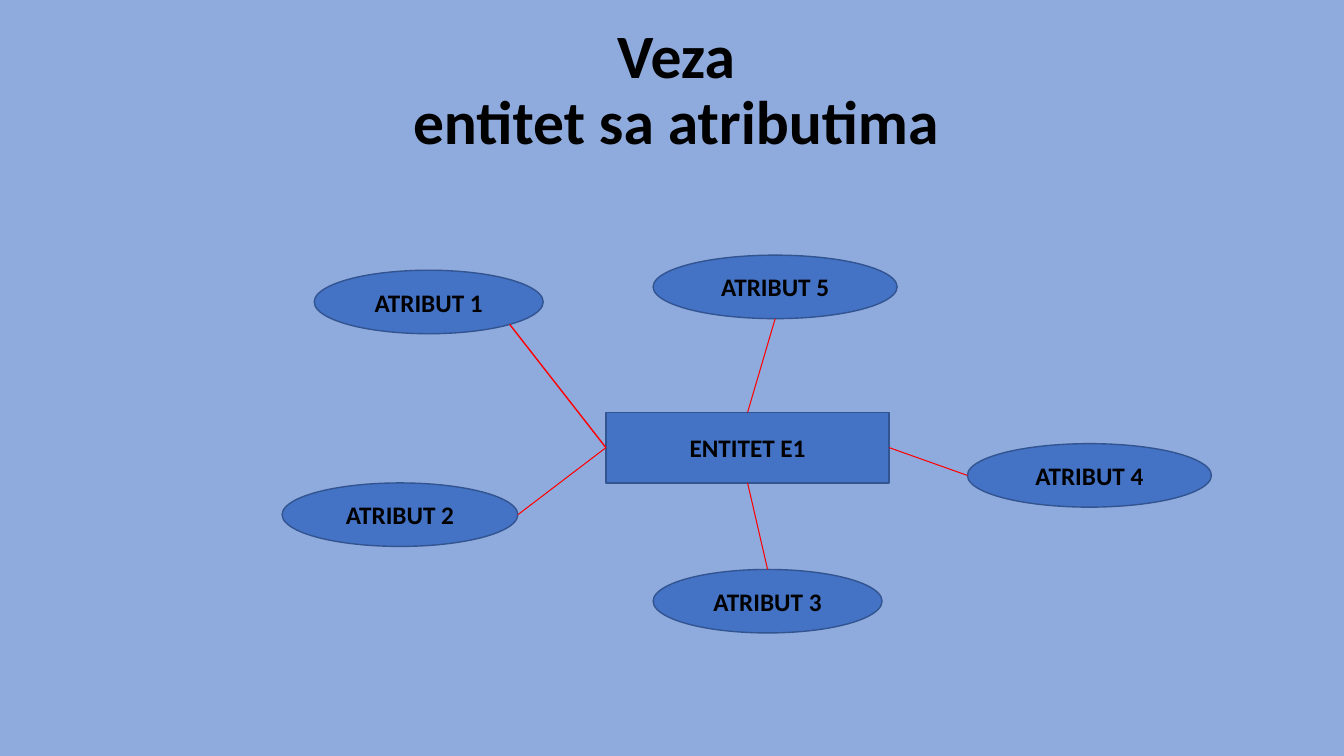
from math import cos, radians, sin

from lxml.etree import SubElement
from pptx import Presentation
from pptx.dml.color import RGBColor
from pptx.enum.shapes import MSO_CONNECTOR as Connector, MSO_SHAPE as Shape
from pptx.enum.text import MSO_ANCHOR as Anchor, PP_ALIGN as Align
from pptx.oxml.ns import qn
from pptx.util import Cm, Pt

BACKGROUND = RGBColor(0x8F, 0xAA, 0xDC)
NODE_FILL = RGBColor(0x44, 0x72, 0xC4)
NODE_LINE = RGBColor(0x32, 0x54, 0x91)
LINK = RGBColor(0xFF, 0x00, 0x00)
INK = RGBColor(0x00, 0x00, 0x00)

TOP, LEFT, BOTTOM, RIGHT = range(4)
ATTRIBUTE_HEIGHT = 1.6

ATTRIBUTES = [
    ("ATRIBUT 3", 16.46, 14.35, 5.77, 270, BOTTOM, 0.75),
    ("ATRIBUT 2", 7.11, 12.17, 5.94, 0, LEFT, 0.75),
    ("ATRIBUT 5", 16.46, 6.43, 6.15, 90, TOP, 0.75),
    ("ATRIBUT 1", 7.92, 6.81, 5.77, 45, LEFT, 1),
    ("ATRIBUT 4", 24.38, 11.18, 6.15, 180, RIGHT, 0.75),
]


class Diagram:
    font = "Calibri"

    def __init__(self, slide):
        self.slide = slide
        slide.background.fill.solid()
        slide.background.fill.fore_color.rgb = BACKGROUND

    def label(self, frame, lines, size, spacing=1.0):
        frame.word_wrap = True
        frame.vertical_anchor = Anchor.MIDDLE
        paragraph = frame.paragraphs[0]
        paragraph.alignment = Align.CENTER
        paragraph.line_spacing = spacing
        for number, line in enumerate(lines):
            if number:
                paragraph.add_line_break()
            run = paragraph.add_run()
            run.text = line
            run.font.name = self.font
            run.font.size = Pt(size)
            run.font.bold = True
            run.font.color.rgb = INK

    def title(self, lines, left, top, width, height):
        heading = self.slide.shapes.add_textbox(Cm(left), Cm(top), Cm(width), Cm(height))
        self.label(heading.text_frame, lines, 44, 0.9)

    def node(self, outline, name, left, top, width, height):
        node = self.slide.shapes.add_shape(outline, Cm(left), Cm(top), Cm(width), Cm(height))
        node.shadow.inherit = False
        node.fill.solid()
        node.fill.fore_color.rgb = NODE_FILL
        node.line.color.rgb = NODE_LINE
        node.line.width = Pt(1)
        self.label(node.text_frame, [name], 18)
        return node

    def link(self, attribute, angle, entity, side, weight):
        turn = radians(angle)
        x = attribute.left + round(attribute.width / 2 * (1 + cos(turn)))
        y = attribute.top + round(attribute.height / 2 * (1 + sin(turn)))
        link = self.slide.shapes.add_connector(Connector.STRAIGHT, x, y, x, y)
        link.end_connect(entity, side)
        link.line.color.rgb = LINK
        link.line.width = Pt(weight)
        SubElement(link._element.spPr, qn("a:effectLst"))


def main():
    deck = Presentation()
    deck.slide_width, deck.slide_height = Cm(33.87), Cm(19.05)
    diagram = Diagram(deck.slides.add_slide(deck.slide_layouts[6]))
    diagram.title(["Veza", "entitet sa atributima"], 1.52, 0.25, 31.04, 4.11)
    entity = diagram.node(Shape.RECTANGLE, "ENTITET E1", 15.27, 10.39, 7.14, 1.78)
    links = []
    for name, left, top, width, angle, side, weight in ATTRIBUTES:
        attribute = diagram.node(Shape.OVAL, name, left, top, width, ATTRIBUTE_HEIGHT)
        links.append((attribute, angle, entity, side, weight))
    for ends in links:
        diagram.link(*ends)
    deck.save("out.pptx")


if __name__ == "__main__":
    main()
